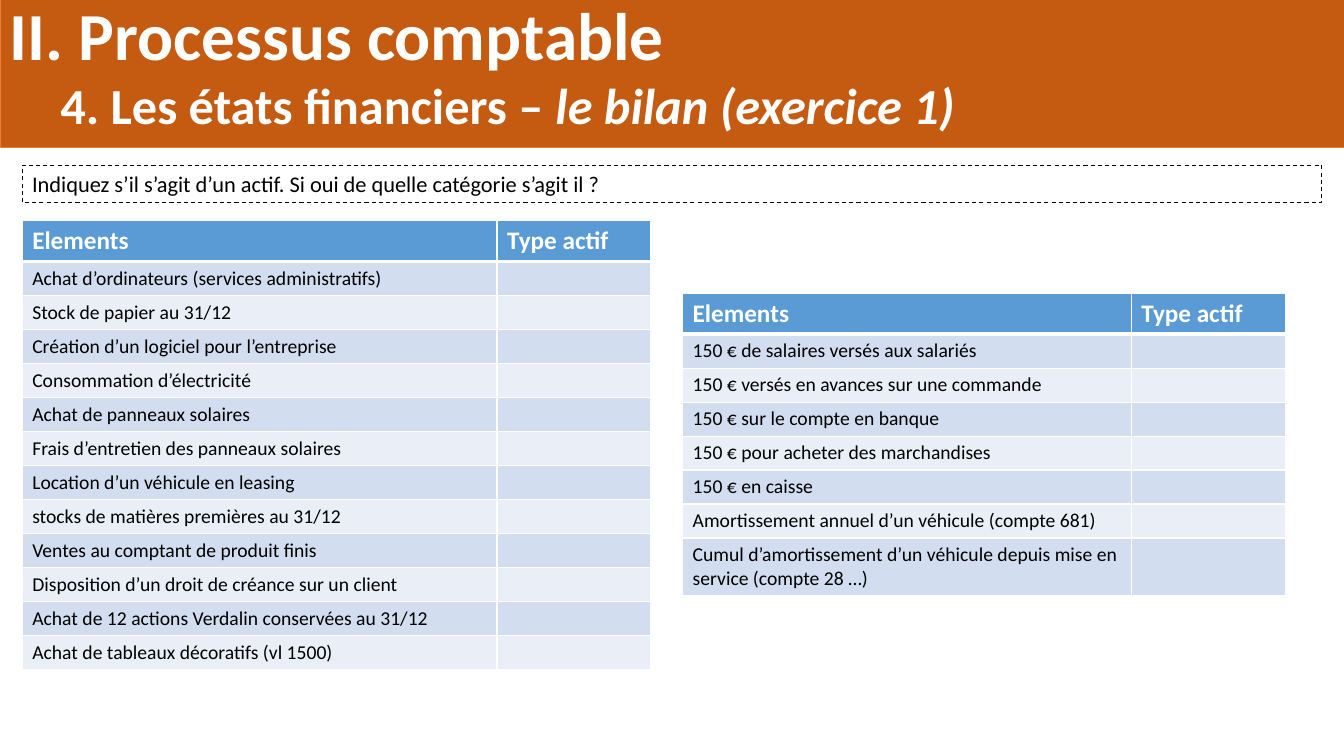
import pptx
import pptx.util
import pptx.dml.color
import pptx.enum.dml
import pptx.enum.shapes
import pptx.enum.text
from lxml import etree
from pptx.util import Inches, Pt

RGBColor = pptx.dml.color.RGBColor
WHITE = RGBColor(0xFF, 0xFF, 0xFF)
BLACK = RGBColor(0x00, 0x00, 0x00)
RUST = RGBColor(0xC5, 0x5A, 0x11)
ORANGE = RGBColor(0xED, 0x7D, 0x31)
HEADER_BLUE = RGBColor(0x5B, 0x9B, 0xD5)
BAND_DARK = RGBColor(0xD2, 0xDE, 0xEF)
BAND_LIGHT = RGBColor(0xEA, 0xEF, 0xF7)
ANCHOR = pptx.enum.text.MSO_ANCHOR
LEFT = pptx.enum.text.PP_ALIGN.LEFT
NS = "{http://schemas.openxmlformats.org/drawingml/2006/main}"

presentation = pptx.Presentation()
presentation.slide_width = Inches(13.33)
presentation.slide_height = Inches(7.5)
slide = presentation.slides.add_slide(presentation.slide_layouts[6])


def format_run(run, size, color, bold=False, italic=False):
    run.font.name = "Calibri"
    run.font.size = Pt(size)
    run.font.color.rgb = color
    run.font.bold = bold
    run.font.italic = italic


def add_box(left, top, width, height, fill, line, line_width):
    box = slide.shapes.add_shape(
        pptx.enum.shapes.MSO_SHAPE.RECTANGLE,
        Inches(left), Inches(top), Inches(width), Inches(height))
    box.shadow.inherit = False
    box.fill.solid()
    box.fill.fore_color.rgb = fill
    box.line.color.rgb = line
    box.line.width = Pt(line_width)
    box.text_frame.word_wrap = True
    return box


# Title band
title = add_box(0, -0.01, 13.33, 1.47, RUST, ORANGE, 0.5)
title.text_frame.vertical_anchor = ANCHOR.MIDDLE
title_lines = [
    [("II. Processus comptable", 48, False)],
    [("\t", 48, False), ("4. Les états financiers – ", 36, False),
     ("le bilan (exercice 1)", 36, True)],
]
title.text_frame.text = "\n".join("" for _ in title_lines)
for paragraph, pieces in zip(title.text_frame.paragraphs, title_lines):
    paragraph.alignment = LEFT
    paragraph.line_spacing = 0.8
    for text, size, italic in pieces:
        run = paragraph.add_run()
        run.text = text
        format_run(run, size, WHITE, True, italic)

# Instruction
question = add_box(0.22, 1.64, 12.89, 0.37, WHITE, BLACK, 0.75)
question.line.dash_style = pptx.enum.dml.MSO_LINE.DASH
question.text_frame.vertical_anchor = ANCHOR.TOP
question.text_frame.text = (
    "Indiquez s’il s’agit d’un actif. Si oui de quelle catégorie s’agit il ?")
question.text_frame.paragraphs[0].alignment = LEFT
format_run(question.text_frame.paragraphs[0].runs[0], 16, BLACK)

# Exercise tables: left, top, column widths, elements to classify
exercises = [
    (0.22, 2.19, (4.71, 1.52), [
        "Achat d’ordinateurs (services administratifs)",
        "Stock de papier au 31/12",
        "Création d’un logiciel pour l’entreprise",
        "Consommation d’électricité",
        "Achat de panneaux solaires",
        "Frais d’entretien des panneaux solaires",
        "Location d’un véhicule en leasing",
        "stocks de matières premières au 31/12",
        "Ventes au comptant de produit finis",
        "Disposition d’un droit de créance sur un client",
        "Achat de 12 actions Verdalin conservées au 31/12",
        "Achat de tableaux décoratifs (vl 1500)",
    ]),
    (6.77, 2.91, (4.45, 1.53), [
        "150 € de salaires versés aux salariés",
        "150 € versés en avances sur une commande",
        "150 € sur le compte en banque",
        "150 € pour acheter des marchandises",
        "150 € en caisse",
        "Amortissement annuel d’un véhicule (compte 681)",
        "Cumul d’amortissement d’un véhicule depuis mise en service (compte 28 …)",
    ]),
]
HEADER_HEIGHT, ROW_HEIGHT = 0.4, 0.33

for left, top, widths, elements in exercises:
    rows = [("Elements", "Type actif")] + [(element, "") for element in elements]
    table = slide.shapes.add_table(
        len(rows), 2, Inches(left), Inches(top), Inches(sum(widths)),
        Inches(HEADER_HEIGHT + ROW_HEIGHT * len(elements))).table
    for column, width in zip(table.columns, widths):
        column.width = Inches(width)

    for row_index, texts in enumerate(rows):
        is_header = row_index == 0
        table.rows[row_index].height = Inches(HEADER_HEIGHT if is_header else ROW_HEIGHT)
        band = HEADER_BLUE if is_header else (BAND_LIGHT, BAND_DARK)[row_index % 2]
        for column_index, text in enumerate(texts):
            cell = table.cell(row_index, column_index)
            paragraph = cell.text_frame.paragraphs[0]
            if text:
                paragraph.text = text
                format_run(paragraph.runs[0], 18 if is_header else 14,
                           WHITE if is_header else BLACK, is_header)
            else:
                # Keeps the empty answer cell as low as its row
                etree.SubElement(paragraph._p, NS + "endParaRPr", sz="1400")

            # White borders, thicker between header and body
            properties = cell._tc.get_or_add_tcPr()
            for side in ("lnL", "lnR", "lnT", "lnB"):
                thick = (row_index, side) in ((0, "lnB"), (1, "lnT"))
                border = etree.SubElement(
                    properties, NS + side, w=str(Pt(3 if thick else 1)))
                border_fill = etree.SubElement(border, NS + "solidFill")
                etree.SubElement(border_fill, NS + "srgbClr", val=str(WHITE))
            cell.fill.solid()
            cell.fill.fore_color.rgb = band

presentation.save("out.pptx")
